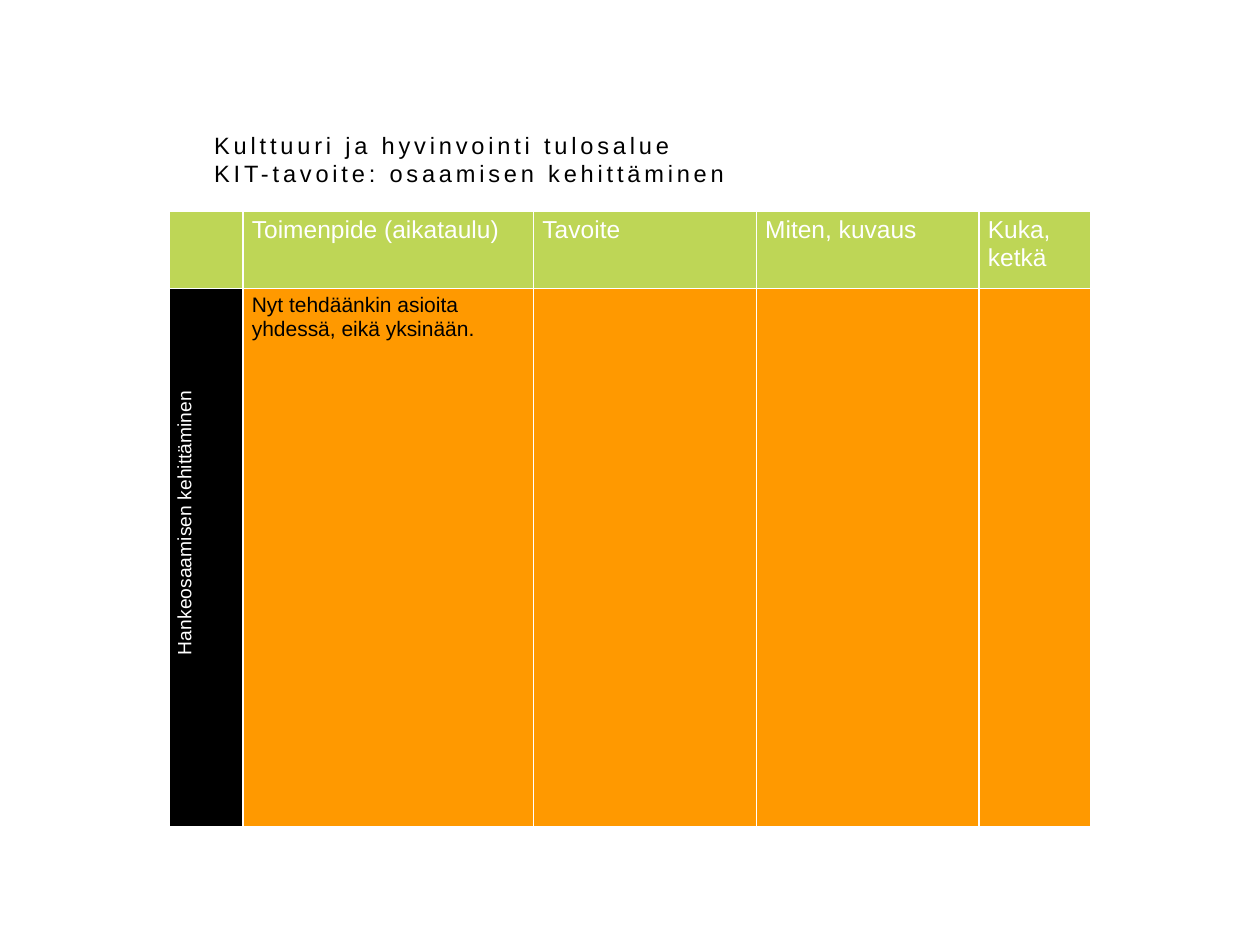
import lxml.etree
import pptx
import pptx.dml.color
import pptx.enum.text
import pptx.oxml.ns
import pptx.util

Inches = pptx.util.Inches
Pt = pptx.util.Pt
RGBColor = pptx.dml.color.RGBColor

WHITE = RGBColor(0xFF, 0xFF, 0xFF)
BLACK = RGBColor(0x00, 0x00, 0x00)
GREEN = RGBColor(0xBE, 0xD6, 0x56)
ORANGE = RGBColor(0xFF, 0x99, 0x00)

TITLE_LINES = ["Kulttuuri ja hyvinvointi tulosalue", "KIT-tavoite: osaamisen kehittäminen"]
HEADINGS = ["", "Toimenpide (aikataulu)", "Tavoite", "Miten, kuvaus", "Kuka, ketkä"]
ACTIONS = ["Hankeosaamisen kehittäminen", "Nyt tehdäänkin asioita yhdessä, eikä yksinään.", "", "", ""]
COLUMN_WIDTHS = [0.59, 2.31, 1.77, 1.77, 0.89]
ROW_HEIGHTS = [0.61, 4.27]
MARGIN_SIDE = Inches(0.07)
MARGIN_END = Inches(0.04)


def format_font(paragraph, size, color):
    """Set the slide's font on a paragraph."""
    paragraph.font.name = "Arial"
    paragraph.font.size = Pt(size)
    paragraph.font.color.rgb = color


def set_margins(target):
    """Give a cell or text frame the shared margins."""
    target.margin_left = target.margin_right = MARGIN_SIDE
    target.margin_top = target.margin_bottom = MARGIN_END


def set_borders(cell, color, width):
    """Draw the four borders of a cell ahead of its fill."""
    properties = cell._tc.get_or_add_tcPr()
    for index, side in enumerate(("lnL", "lnR", "lnT", "lnB")):
        line = lxml.etree.Element(pptx.oxml.ns.qn(f"a:{side}"), w=str(Pt(width)))
        fill = lxml.etree.SubElement(line, pptx.oxml.ns.qn("a:solidFill"))
        lxml.etree.SubElement(fill, pptx.oxml.ns.qn("a:srgbClr"), val=str(color))
        properties.insert(index, line)


def place_title(slide, left, top, width, height):
    """Move the title placeholder into its box and fill in its lines."""
    title = slide.shapes.title
    title.left, title.top, title.width, title.height = left, top, width, height
    frame = title.text_frame
    frame.text = "\n".join(TITLE_LINES)
    frame.word_wrap = True
    frame.auto_size = pptx.enum.text.MSO_AUTO_SIZE.NONE
    frame.vertical_anchor = pptx.enum.text.MSO_ANCHOR.MIDDLE
    set_margins(frame)
    for paragraph in frame.paragraphs:
        paragraph.alignment = pptx.enum.text.PP_ALIGN.LEFT
        format_font(paragraph, 13.5, BLACK)
        for run in paragraph.runs:
            run.font._element.set("spc", "220")


def fill_cell(cell, text, fill, size, color):
    """Write and format one table cell."""
    cell.text = text
    cell.fill.solid()
    cell.fill.fore_color.rgb = fill
    set_margins(cell)
    set_borders(cell, WHITE, 1)
    format_font(cell.text_frame.paragraphs[0], size, color)


def turn_cell(cell, indent):
    """Turn a cell's text upwards and shift it from the centre by an indent."""
    cell._tc.get_or_add_tcPr().set("vert", "vert270")
    paragraph = cell.text_frame.paragraphs[0]
    paragraph.alignment = pptx.enum.text.PP_ALIGN.CENTER
    paragraph._p.get_or_add_pPr().set("marL", str(indent))


def place_plan_table(slide, left, top, width, height):
    """Add the plan table with its headings and action row."""
    frame = slide.shapes.add_table(len(ROW_HEIGHTS), len(HEADINGS), left, top, width, height)
    table = frame.table
    table.first_row = table.horz_banding = False
    for column, column_width in zip(table.columns, COLUMN_WIDTHS):
        column.width = int(width * column_width / sum(COLUMN_WIDTHS))
    for row, row_height in zip(table.rows, ROW_HEIGHTS):
        row.height = int(height * row_height / sum(ROW_HEIGHTS))
    for index, (heading, action) in enumerate(zip(HEADINGS, ACTIONS)):
        fill_cell(table.cell(0, index), heading, GREEN, 14, WHITE)
        if index == 0:
            fill_cell(table.cell(1, index), action, BLACK, 11, WHITE)
        else:
            fill_cell(table.cell(1, index), action, ORANGE, 12, BLACK)
    turn_cell(table.cell(1, 0), Inches(0.55))


def main():
    """Build and save the slide."""
    presentation = pptx.Presentation()
    presentation.slide_width = Inches(10)
    presentation.slide_height = Inches(7.5)
    slide = presentation.slides.add_slide(presentation.slide_layouts[5])
    place_plan_table(slide, Inches(1.34), Inches(1.68), Inches(7.32), Inches(4.88))
    place_title(slide, Inches(1.63), Inches(1.15), Inches(6.75), Inches(0.22))
    presentation.save("out.pptx")


if __name__ == "__main__":
    main()
